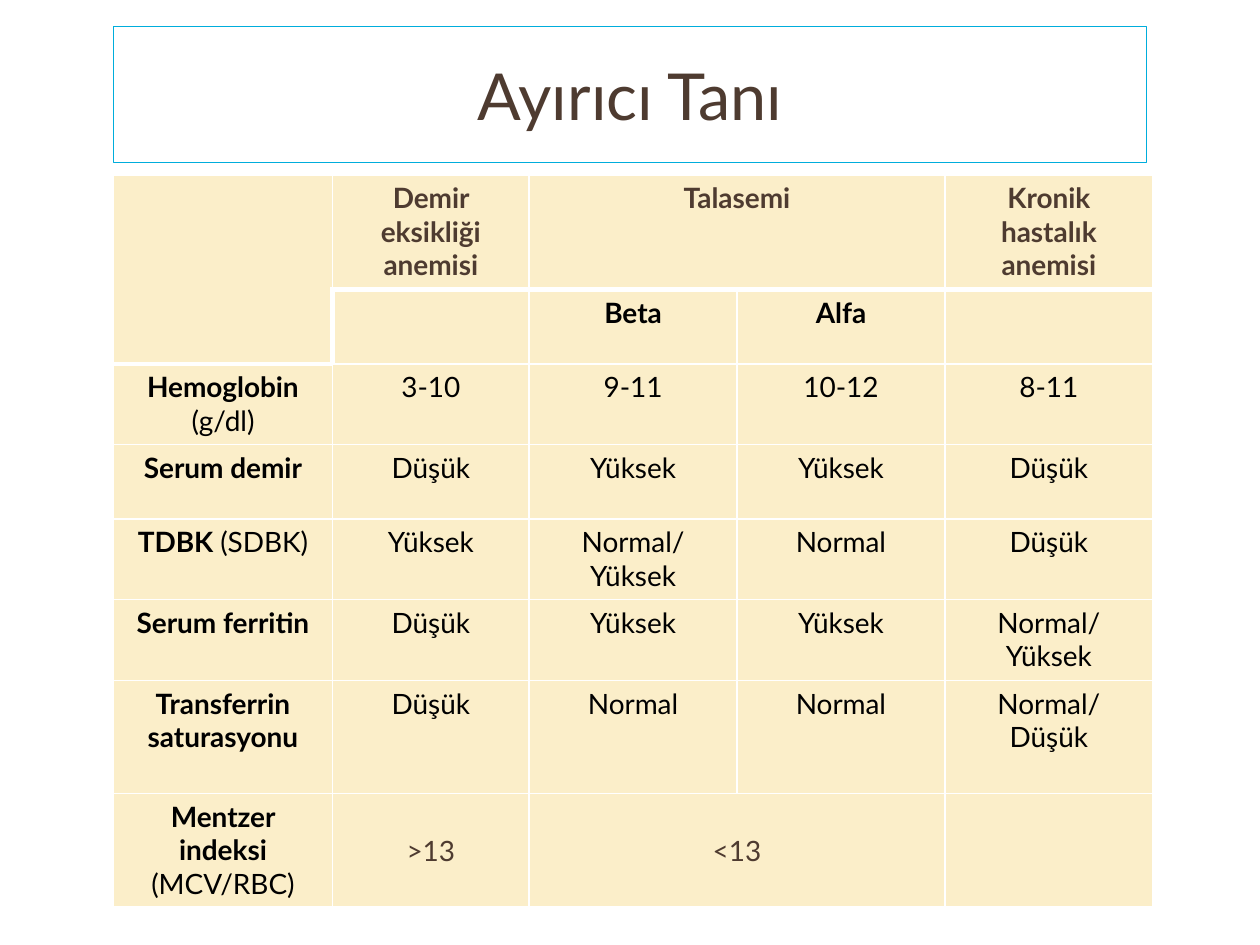
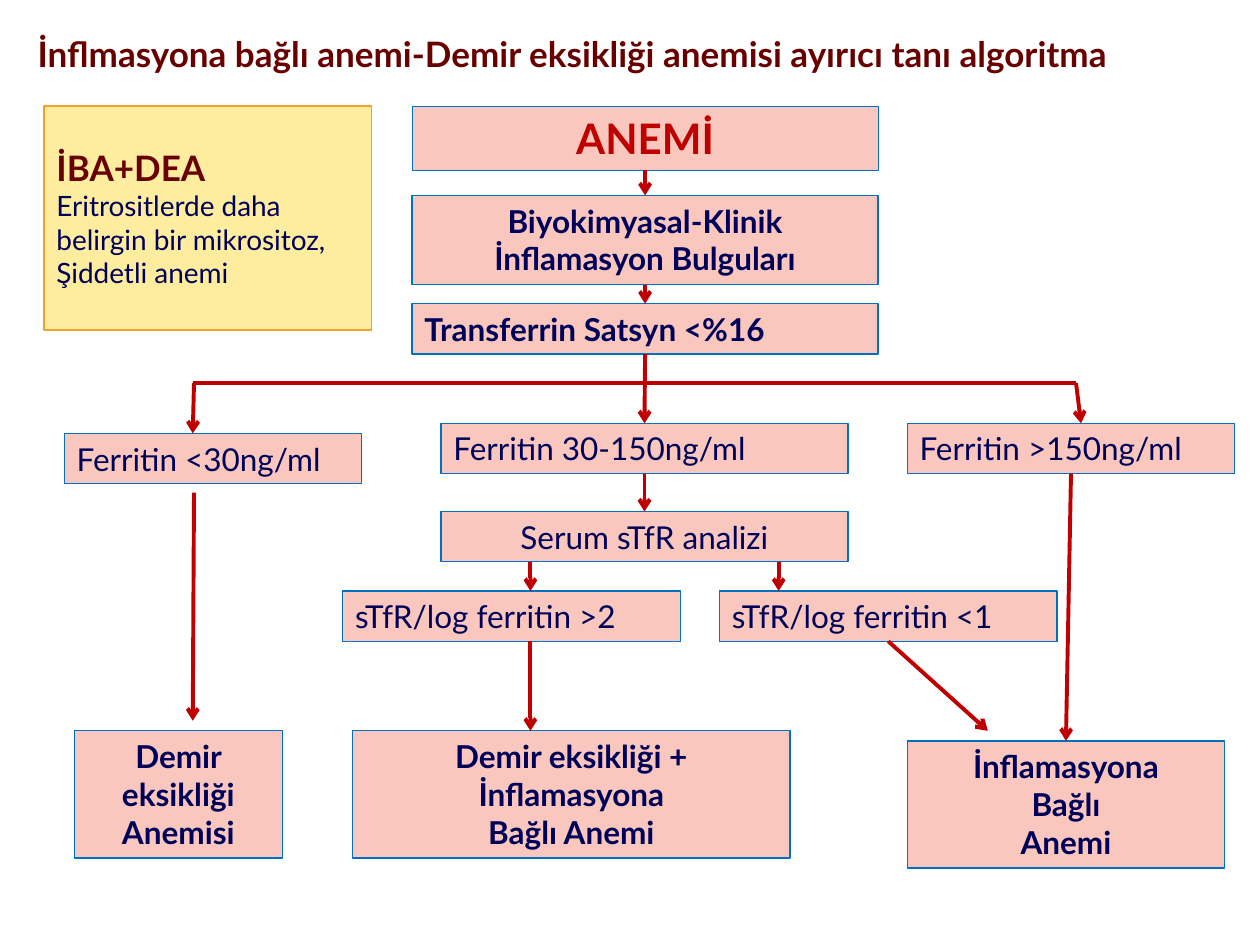
from dataclasses import dataclass

from lxml.etree import SubElement
from pptx import Presentation
from pptx.dml.color import RGBColor
from pptx.enum.shapes import MSO_CONNECTOR, MSO_SHAPE
from pptx.enum.text import MSO_ANCHOR, MSO_AUTO_SIZE, PP_ALIGN
from pptx.oxml.ns import qn
from pptx.util import Pt

PX = 9144
FONT = "Lato"
COLORS = {
    "white": "FFFFFF", "black": "000000", "brown": "4E3B30", "cyan": "00ADDC",
    "cream": "FBEEC9", "pink": "F9C7BD", "blue": "0070C0", "navy": "000058",
    "red": "C00000", "maroon": "680000", "yellow": "FFED9F", "amber": "F0A22E",
}
LEFT, CENTER = PP_ALIGN.LEFT, PP_ALIGN.CENTER
BOTTOM_SITE, TOP_SITE = 2, 0


@dataclass(frozen=True)
class Box:
    text: str
    x: int
    y: int
    w: int
    h: int
    size: int = 18
    color: str = "navy"
    bold: bool = False
    align: PP_ALIGN = LEFT
    fill: str = "pink"
    line: str = "blue"
    line_width: float = 0.75
    anchor: MSO_ANCHOR = MSO_ANCHOR.TOP
    grow: bool = True


@dataclass(frozen=True)
class Link:
    start: str | tuple[int, int]
    end: str | tuple[int, int]
    arrow: bool = True


@dataclass(frozen=True)
class Row:
    height: int
    label: str
    unit: str
    values: tuple[str, ...]
    color: str = "black"
    bold: bool = False
    anchor: MSO_ANCHOR = MSO_ANCHOR.TOP


TITLE = Box("Ayırıcı Tanı", 90, 21, 820, 108, size=37, color="brown", align=CENTER,
            fill="white", line="cyan", anchor=MSO_ANCHOR.MIDDLE, grow=False)

TABLE_AT = (90, 139)
COLUMNS = (174, 156, 165, 165, 165)
ROWS = (
    Row(91, "", "", ("Demir eksikliği\nanemisi", "Talasemi", "", "Kronik hastalık anemisi"),
        color="brown", bold=True),
    Row(59, "", "", ("", "Beta", "Alfa", ""), bold=True),
    Row(64, "Hemoglobin ", "(g/dl)", ("3-10", "9-11", "10-12", "8-11")),
    Row(59, "Serum demir", "", ("Düşük", "Yüksek", "Yüksek", "Düşük")),
    Row(64, "TDBK ", "(SDBK)", ("Yüksek", "Normal/ Yüksek", "Normal", "Düşük")),
    Row(64, "Serum ferritin", "", ("Düşük", "Yüksek", "Yüksek", "Normal/ Yüksek")),
    Row(90, "Transferrin saturasyonu", "", ("Düşük", "Normal", "Normal", "Normal/ Düşük")),
    Row(90, "Mentzer indeksi ", "(MCV/RBC)", (">13", "<13", "", ""),
        color="brown", anchor=MSO_ANCHOR.MIDDLE),
)
MERGES = (((0, 0), (1, 0)), ((0, 2), (0, 3)), ((7, 2), (7, 3)))
THICK_EDGES = (
    {("B", 0, c) for c in range(1, 5)} | {("T", 1, c) for c in range(1, 5)}
    | {("B", 0, 0), ("B", 1, 0), ("T", 2, 0), ("L", 1, 1)}
)

BOXES = {
    "anemia": Box("ANEMİ", 327, 84, 370, 51, size=24, color="red", bold=True,
                  align=CENTER, line_width=0.25),
    "findings": Box("Biyokimyasal-Klinik\nİnflamasyon Bulguları", 327, 155, 370, 71,
                    bold=True, align=CENTER),
    "transferrin": Box("Transferrin Satsyn <%16", 327, 241, 370, 40, bold=True),
    "ferritin_low": Box("Ferritin <30ng/ml", 51, 344, 236, 40),
    "ferritin_mid": Box("Ferritin 30-150ng/ml", 350, 336, 323, 40),
    "ferritin_high": Box("Ferritin >150ng/ml", 720, 336, 260, 40),
    "ratio_high": Box("sTfR/log ferritin >2", 272, 469, 268, 40),
    "ratio_low": Box("sTfR/log ferritin <1", 571, 469, 268, 40),
    "stfr": Box("Serum sTfR analizi", 350, 406, 323, 40, align=CENTER),
    "iron": Box("Demir eksikliği\nAnemisi", 59, 580, 165, 101, bold=True, align=CENTER),
    "combined": Box("Demir eksikliği +\nİnflamasyona\nBağlı Anemi", 280, 580, 347, 101,
                    bold=True, align=CENTER),
    "inflammation": Box("İnflamasyona\nBağlı\nAnemi", 720, 588, 252, 101,
                        bold=True, align=CENTER),
}
LINKS = (
    Link("anemia", "findings"),
    Link("findings", "transferrin"),
    Link("transferrin", "ferritin_mid"),
    Link((153, 304), (854, 304), arrow=False),
    Link((154, 304), (153, 344)),
    Link("ferritin_mid", "stfr"),
    Link((154, 391), (153, 572)),
    Link("ratio_low", (784, 580)),
    Link((854, 304), (858, 336)),
    Link("ferritin_high", "inflammation"),
    Link((421, 446), (421, 469)),
    Link((618, 446), (618, 469)),
    Link((421, 509), (421, 580)),
)
NOTE = Box("İBA+DEA", 35, 84, 260, 178, size=20, color="maroon", bold=True,
           fill="yellow", line="amber", anchor=MSO_ANCHOR.MIDDLE, grow=False)
NOTE_BODY = "Eritrositlerde daha belirgin bir mikrositoz, Şiddetli anemi"
HEADING = "İnflmasyona bağlı anemi-Demir eksikliği anemisi ayırıcı tanı algoritma"


def rgb(name: str) -> RGBColor:
    return RGBColor.from_string(COLORS[name])


def write(tf, text: str, *, size: int, color: str, bold: bool = False,
          align: PP_ALIGN = LEFT, same_line: bool = False) -> None:
    for line in text.split("\n"):
        p = tf.paragraphs[-1]
        if p.runs and not same_line:
            p = tf.add_paragraph()
        p.alignment = align
        r = p.add_run()
        r.text = line
        r.font.name = FONT
        r.font.size = Pt(size)
        r.font.bold = bold
        r.font.color.rgb = rgb(color)


def add_box(s, box: Box):
    sp = s.shapes.add_shape(MSO_SHAPE.RECTANGLE, *(v * PX for v in (box.x, box.y, box.w, box.h)))
    sp.shadow.inherit = False
    sp.fill.solid()
    sp.fill.fore_color.rgb = rgb(box.fill)
    sp.line.color.rgb = rgb(box.line)
    sp.line.width = Pt(box.line_width)
    tf = sp.text_frame
    tf.word_wrap = True
    tf.vertical_anchor = box.anchor
    if box.grow:
        tf.auto_size = MSO_AUTO_SIZE.SHAPE_TO_FIT_TEXT
    write(tf, box.text, size=box.size, color=box.color, bold=box.bold, align=box.align)
    return sp


def add_link(s, link: Link, shapes: dict) -> None:
    cx = s.shapes.add_connector(MSO_CONNECTOR.STRAIGHT, 0, 0, 0, 0)
    if isinstance(link.start, str):
        cx.begin_connect(shapes[link.start], BOTTOM_SITE)
    else:
        cx.begin_x, cx.begin_y = (v * PX for v in link.start)
    if isinstance(link.end, str):
        cx.end_connect(shapes[link.end], TOP_SITE)
    else:
        cx.end_x, cx.end_y = (v * PX for v in link.end)
    cx.line.color.rgb = rgb("red")
    cx.line.width = Pt(2.25)
    if link.arrow:
        SubElement(cx.line._get_or_add_ln(), qn("a:tailEnd"), type="arrow")
    SubElement(cx._element.spPr, qn("a:effectLst"))


def style_cell(cell, r: int, c: int) -> None:
    tc_pr = cell._tc.get_or_add_tcPr()
    for side in "LRTB":
        width = 3 if (side, r, c) in THICK_EDGES else 1
        ln = SubElement(tc_pr, qn(f"a:ln{side}"), w=str(Pt(width)))
        fill = SubElement(ln, qn("a:solidFill"))
        SubElement(fill, qn("a:srgbClr"), val=COLORS["white"])
    cell.fill.solid()
    cell.fill.fore_color.rgb = rgb("cream")


def add_diagnosis_table(s) -> None:
    x, y = TABLE_AT
    size = (sum(COLUMNS), sum(row.height for row in ROWS))
    table = s.shapes.add_table(len(ROWS), len(COLUMNS), x * PX, y * PX,
                               *(v * PX for v in size)).table
    table.first_row = table.horz_banding = False
    for column, width in zip(table.columns, COLUMNS):
        column.width = width * PX
    for r, row in enumerate(ROWS):
        table.rows[r].height = row.height * PX
        for c, text in enumerate((row.label, *row.values)):
            cell = table.cell(r, c)
            style_cell(cell, r, c)
            if not text:
                continue
            color = row.color if c else "black"
            write(cell.text_frame, text, size=16, color=color,
                  bold=row.bold or c == 0, align=CENTER)
            if c == 0 and row.unit:
                write(cell.text_frame, row.unit, size=16, color=color,
                      align=CENTER, same_line=True)
            if c:
                cell.vertical_anchor = row.anchor
    for first, last in MERGES:
        table.cell(*first).merge(table.cell(*last))


def add_algorithm(s) -> None:
    shapes = {name: add_box(s, box) for name, box in BOXES.items()}
    for link in LINKS:
        add_link(s, link, shapes)
    tf = s.shapes.add_textbox(20 * PX, 21 * PX, 961 * PX, 44 * PX).text_frame
    tf.word_wrap = True
    write(tf, HEADING, size=20, color="maroon", bold=True)
    note = add_box(s, NOTE)
    write(note.text_frame, NOTE_BODY, size=16, color="navy")


def main() -> None:
    prs = Presentation()
    prs.slide_width, prs.slide_height = 1000 * PX, 750 * PX
    blank = prs.slide_layouts[6]
    s = prs.slides.add_slide(blank)
    add_box(s, TITLE)
    add_diagnosis_table(s)
    add_algorithm(prs.slides.add_slide(blank))
    prs.save("out.pptx")


if __name__ == "__main__":
    main()
